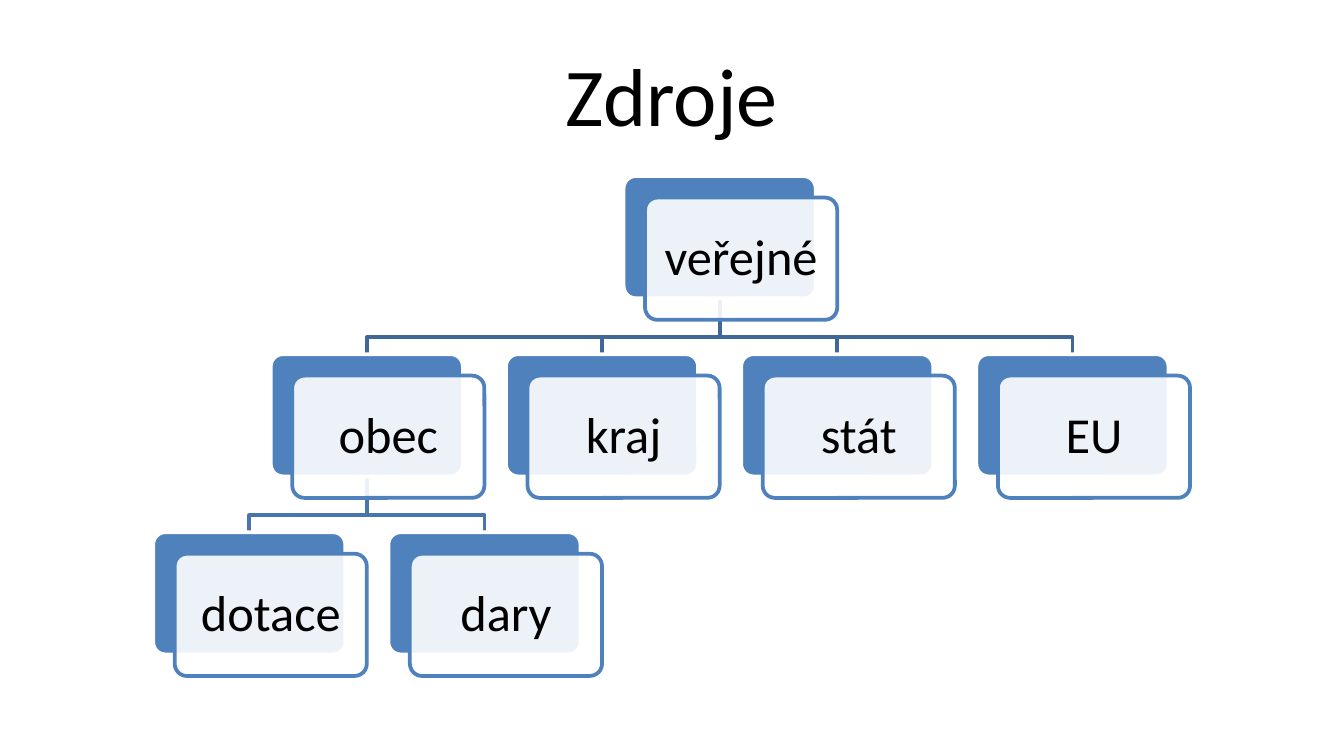
from lxml import etree
from pptx import Presentation
from pptx.dml.color import RGBColor
from pptx.enum import shapes, text
from pptx.oxml import ns
from pptx.util import Inches, Pt

TITLE = "Zdroje"
NODES = {
    "veřejné": (4, 0),
    "obec": (1, 1),
    "kraj": (3, 1),
    "stát": (5, 1),
    "EU": (7, 1),
    "dotace": (0, 2),
    "dary": (2, 2),
}
CHILDREN = {"veřejné": ["EU", "stát", "kraj", "obec"], "obec": ["dary", "dotace"]}

BLUE = RGBColor(0x4F, 0x81, 0xBD)
WHITE = RGBColor(0xFF, 0xFF, 0xFF)
BLACK = RGBColor(0, 0, 0)
BRANCH_COLORS = {"veřejné": RGBColor(0x3F, 0x67, 0x97), "obec": RGBColor(0x48, 0x75, 0xAC)}

SLIDE_W = 10
SLIDE_H = SLIDE_W * 9 / 16
LEFT, TOP = 1.14, 1.31
COLUMN_STEP, ROW_STEP = 1.75 / 2, 2.65 / 2
CARD_W, CARD_H = 1.43, 0.91
OFFSET = 0.16
BRANCH_DROP = 0.29
INSET = 0.1


def position(name):
    column, row = NODES[name]
    return LEFT + column * COLUMN_STEP, TOP + row * ROW_STEP


def write(shape, words, size, inset):
    tf = shape.text_frame
    settings = {"word_wrap": True, "vertical_anchor": text.MSO_ANCHOR.MIDDLE}
    for side in ("left", "top", "right", "bottom"):
        settings[f"margin_{side}"] = Inches(inset)
    for key, value in settings.items():
        setattr(tf, key, value)
    p = tf.paragraphs[0]
    p.alignment = text.PP_ALIGN.CENTER
    r = p.add_run()
    r.text = words
    for key, value in {"name": "Calibri", "size": Pt(size)}.items():
        setattr(r.font, key, value)
    r.font.color.rgb = BLACK
    return p


def outline(shape, color):
    shape.line.color.rgb = color
    shape.line.width = Pt(2)
    shape.shadow.inherit = False


def add_branch(s, parent, child):
    px, py = position(parent)
    cx, cy = position(child)
    start, end = px + CARD_W / 2, cx + CARD_W / 2
    bottom = py + CARD_H
    bend = bottom + BRANCH_DROP
    points = [(start, bottom), (start, bend), (end, bend), (end, cy)]
    points = [(Inches(x), Inches(y)) for x, y in points]
    builder = s.shapes.build_freeform(*points[0])
    builder.add_line_segments(points[1:], close=False)
    branch = builder.convert_to_shape()
    branch.fill.background()
    outline(branch, BRANCH_COLORS[parent])


def add_panel(s, x, y, fill, line):
    sp = s.shapes.add_shape(
        shapes.MSO_SHAPE.ROUNDED_RECTANGLE,
        Inches(x), Inches(y), Inches(CARD_W), Inches(CARD_H),
    )
    sp.adjustments[0] = 0.1
    sp.fill.solid()
    sp.fill.fore_color.rgb = fill
    outline(sp, line)
    return sp


def add_card(s, name):
    x, y = position(name)
    add_panel(s, x, y, BLUE, WHITE)
    front = add_panel(s, x + OFFSET, y + OFFSET, WHITE, BLUE)
    color = front.element.spPr.find(ns.qn("a:solidFill"))[0]
    etree.SubElement(color, ns.qn("a:alpha"), val="90000")
    write(front, name, 27, INSET).line_spacing = 0.9


prs = Presentation()
prs.slide_width, prs.slide_height = Inches(SLIDE_W), Inches(SLIDE_H)
s = prs.slides.add_slide(prs.slide_layouts[6])

title = s.shapes.add_textbox(Inches(0.5), Inches(0.23), Inches(9), Inches(0.94))
write(title, TITLE, 44, 0.05)

for parent, children in CHILDREN.items():
    for child in children:
        add_branch(s, parent, child)
for name in NODES:
    add_card(s, name)

prs.save("out.pptx")
